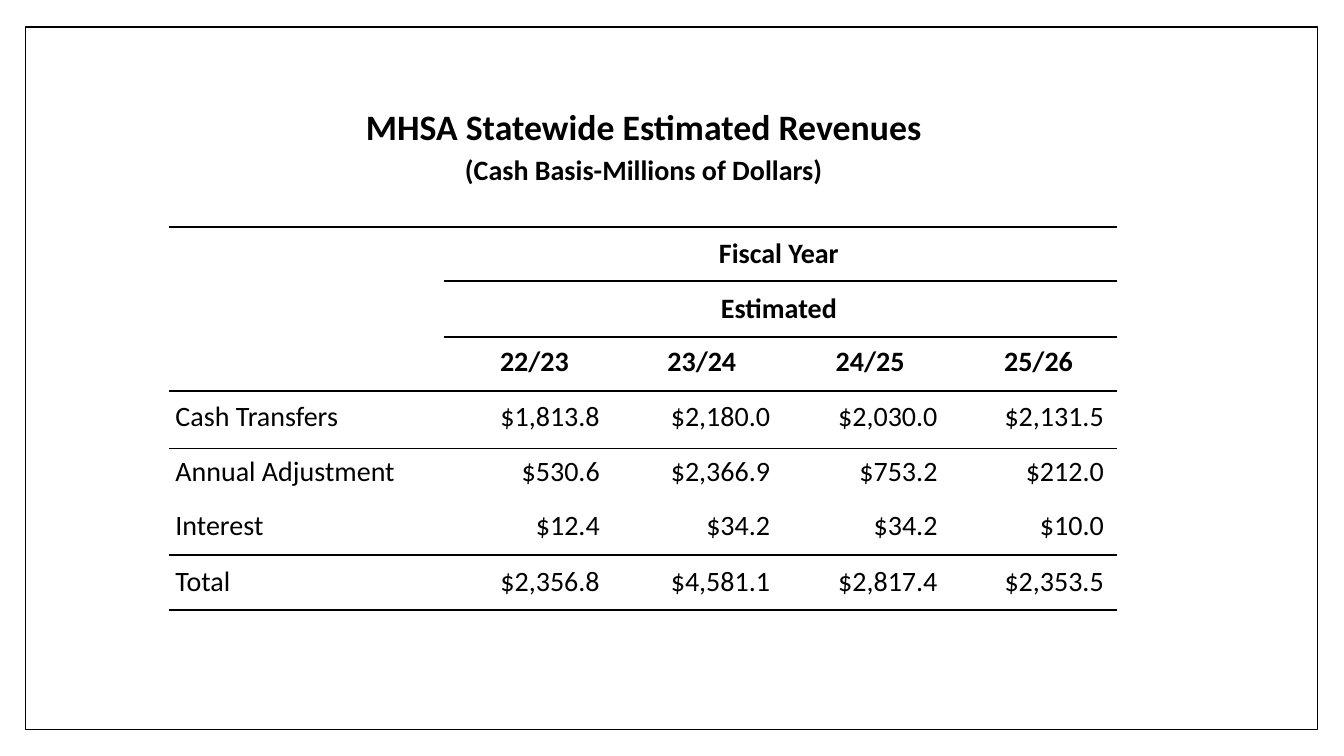
import pptx
import pptx.util
import pptx.dml.color
import pptx.enum.shapes
import pptx.enum.text
from lxml import etree
from pptx.oxml.ns import qn

Inches, Pt = pptx.util.Inches, pptx.util.Pt
RGBColor = pptx.dml.color.RGBColor
ALIGN = pptx.enum.text.PP_ALIGN
ANCHOR = pptx.enum.text.MSO_ANCHOR

# Content
TITLE = [("MHSA Statewide Estimated Revenues", 25.5, 4.8),
         ("(Cash Basis-Millions of Dollars)", 20, 3.2)]
HEADS = [("Fiscal Year", 20, 1.2), ("Estimated", 20, 15.2)]
ROWS = [
    ("", "22/23", "23/24", "24/25", "25/26"),
    ("Cash Transfers", "$1,813.8", "$2,180.0", "$2,030.0", "$2,131.5"),
    ("Annual Adjustment", "$530.6", "$2,366.9", "$753.2", "$212.0"),
    ("Interest", "$12.4", "$34.2", "$34.2", "$10.0"),
    ("Total", "$2,356.8", "$4,581.1", "$2,817.4", "$2,353.5"),
    ("", "", "", "", ""),
]

# Layout
BLACK = RGBColor(0, 0, 0)
WHITE = RGBColor(255, 255, 255)
FONT = "Calibri"
LEFT, TOP, RIGHT = 1.68, 3.49, 11.08
WIDTHS = [2.79, 1.81, 1.67, 1.67, 1.46]
HEIGHTS = [0.39, 0.57, 0.54, 0.52, 0.54, 0.45]
INDENTS = [0, 0.49, 0.34, 0.34, 0.34]    # left gap of the year heads
GAPS = [0, 0.33, 0.31, 0.32, 0.13]       # right gap of the amounts
PADS = [0, 0.09, 0.06, 0.06, 0.09, 0]    # top gap by row
BEFORE = [0, 6.3, 4.6, 4.7, 6.3, 0]      # space above text by row
EDGES = {1, 2, 4, 5}                     # row edges with a line
RULES = [(LEFT, 2.25), (4.4, 2.79), (4.4, 3.34)]


def style(para, size, bold):
    for run in para.runs:
        run.font.name = FONT
        run.font.size = Pt(size)
        run.font.bold = bold
        run.font.color.rgb = BLACK


def add_text(slide, box, lines, pad, anchor):
    frame = slide.shapes.add_textbox(*map(Inches, box)).text_frame
    frame.word_wrap = True
    frame.vertical_anchor = anchor
    frame.margin_left = frame.margin_right = frame.margin_bottom = 0
    frame.margin_top = Inches(pad)
    frame.text = "\n".join(line[0] for line in lines)
    for para, (_, size, before) in zip(frame.paragraphs, lines):
        para.alignment = ALIGN.CENTER
        para.space_before = Pt(before)
        style(para, size, True)


def set_edges(cell, row):
    props = cell._tc.get_or_add_tcPr()
    lines = {"lnL": False, "lnR": False,
             "lnT": row in EDGES, "lnB": row + 1 in EDGES}
    for i, (tag, shown) in enumerate(lines.items()):
        line = etree.Element(qn("a:" + tag), w=str(Pt(1.5)))
        if shown:
            fill = etree.SubElement(line, qn("a:solidFill"))
            etree.SubElement(fill, qn("a:srgbClr"), val=str(BLACK))
        else:
            etree.SubElement(line, qn("a:noFill"))
        props.insert(i, line)


def fill_cell(cell, row, col):
    cell.fill.background()
    cell.margin_left = cell.margin_right = cell.margin_bottom = 0
    cell.margin_top = Inches(PADS[row])
    cell.text_frame.text = ROWS[row][col]
    para = cell.text_frame.paragraphs[0]
    para.space_before = Pt(BEFORE[row])
    if row == 0:
        cell.margin_left = Inches(INDENTS[col])
        para.line_spacing = Pt(19.2)
    elif col == 0:
        cell.margin_left = Inches(0.06)
    else:
        cell.margin_right = Inches(GAPS[col])
        para.alignment = ALIGN.RIGHT
    style(para, 20, row == 0)
    set_edges(cell, row)


def main():
    deck = pptx.Presentation()
    deck.slide_width, deck.slide_height = Inches(13.33), Inches(7.5)
    slide = deck.slides.add_slide(deck.slide_layouts[6])

    # Frame
    frame = slide.shapes.add_shape(
        pptx.enum.shapes.MSO_SHAPE.RECTANGLE,
        Inches(0.25), Inches(0.27), Inches(12.82), Inches(6.97))
    frame.shadow.inherit = False
    frame.fill.solid()
    frame.fill.fore_color.rgb = WHITE
    frame.line.color.rgb = BLACK
    frame.line.width = Pt(1)

    # Table
    table = slide.shapes.add_table(
        len(ROWS), len(WIDTHS), Inches(LEFT), Inches(TOP),
        Inches(sum(WIDTHS)), Inches(sum(HEIGHTS))).table
    table.first_row = table.horz_banding = False
    for col, width in enumerate(WIDTHS):
        table.columns[col].width = Inches(width)
    for row, height in enumerate(HEIGHTS):
        table.rows[row].height = Inches(height)
        for col in range(len(WIDTHS)):
            fill_cell(table.cell(row, col), row, col)

    # Title and column heads
    add_text(slide, (3.56, 0.96, 5.65, 0.89), TITLE, 0.07, ANCHOR.MIDDLE)
    add_text(slide, (7.1, 2.32, 1.25, 0.91), HEADS, 0.02, ANCHOR.TOP)

    # Rules above the table
    for left, y in RULES:
        rule = slide.shapes.add_connector(
            pptx.enum.shapes.MSO_CONNECTOR.STRAIGHT,
            Inches(left), Inches(y), Inches(RIGHT), Inches(y))
        rule.line.color.rgb = BLACK
        rule.line.width = Pt(1.5)
        etree.SubElement(rule._element.spPr, qn("a:effectLst"))

    deck.save("out.pptx")


if __name__ == "__main__":
    main()
